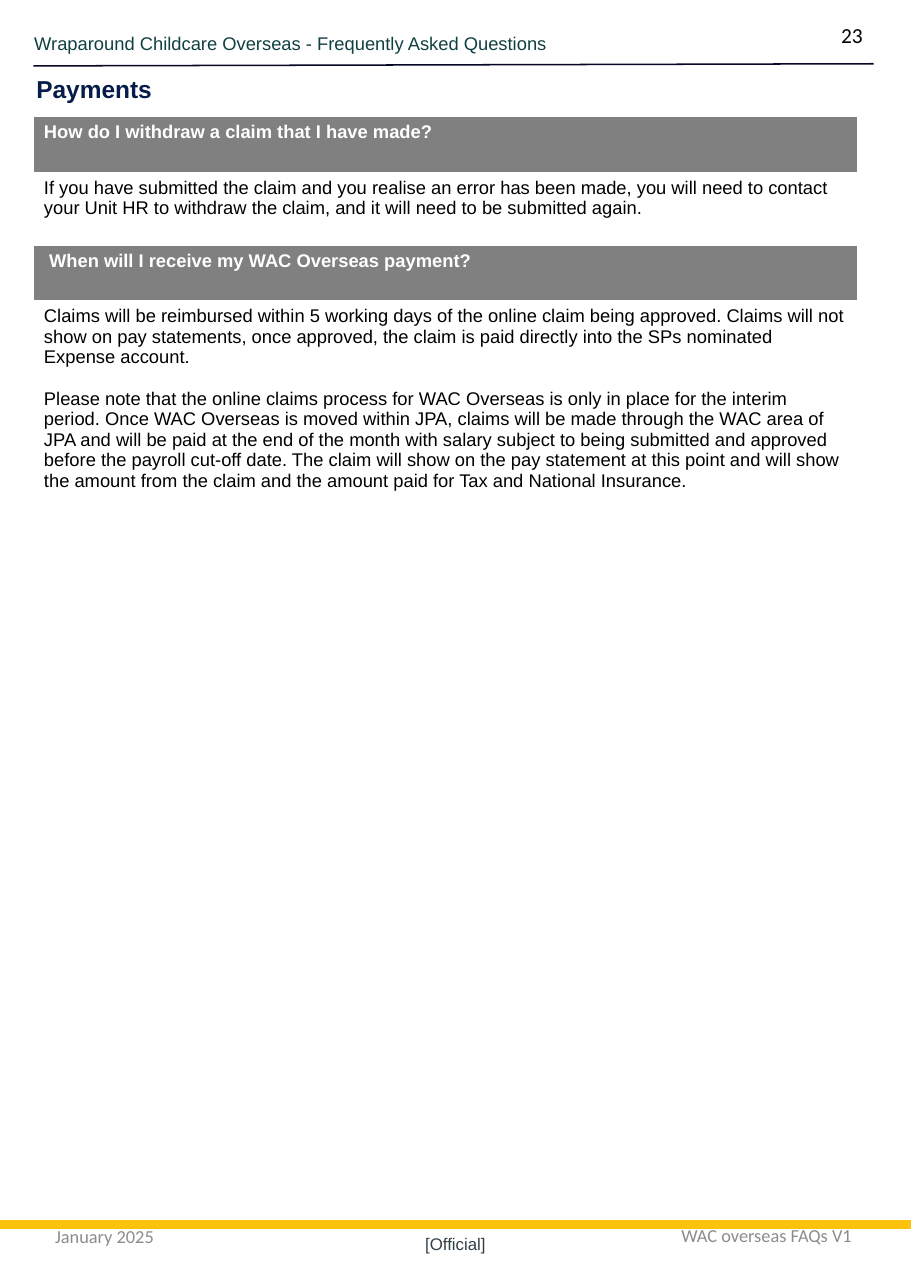
from pptx import Presentation
from pptx.util import Cm, Pt
from pptx.dml.color import RGBColor as Rgb
from pptx.enum.shapes import MSO_CONNECTOR as Link
from pptx.enum.text import PP_ALIGN as Align, MSO_ANCHOR as Anchor
from pptx.oxml import parse_xml
from pptx.oxml.ns import nsdecls

WIDE, HIGH = 21.0, 29.7
BODY = dict(name="Arial", size=Pt(12), bold=False)
HEAD = dict(BODY, bold=True)
FOOT = dict(name="Calibri", size=Pt(12))

# Question, answer paragraphs, height of question row, height of answer row
FAQS = [
    ("How do I withdraw a claim that I have made?",
     ["If you have submitted the claim and you realise an error has been made, "
      "you will need to contact your Unit HR to withdraw the claim, and it will "
      "need to be submitted again."], 1.28, 1.69),
    (" When will I receive my WAC Overseas payment?",
     ["Claims will be reimbursed within 5 working days of the online claim being "
      "approved. Claims will not show on pay statements, once approved, the claim "
      "is paid directly into the SPs nominated Expense account.",
      "Please note that the online claims process for WAC Overseas is only in "
      "place for the interim period. Once WAC Overseas is moved within JPA, claims "
      "will be made through the WAC area of JPA and will be paid at the end of the "
      "month with salary subject to being submitted and approved before the payroll "
      "cut-off date. The claim will show on the pay statement at this point and "
      "will show the amount from the claim and the amount paid for Tax and National "
      "Insurance."], 1.27, 4.83),
]


def tint(code):
    return Rgb.from_string(code)


def write(frame, texts, font, color, align=Align.LEFT):
    for i, text in enumerate(texts):
        para = frame.paragraphs[0] if i == 0 else frame.add_paragraph()
        para.alignment = align
        if i < len(texts) - 1:
            para.space_after = Pt(13.5)
        run = para.add_run()
        run.text = text
        for key, val in font.items():
            setattr(run.font, key, val)
        run.font.color.rgb = tint(color)


def label(slide, box, text, font, color, align=Align.LEFT, anchor=Anchor.TOP, pad=True):
    frame = slide.shapes.add_textbox(*map(Cm, box)).text_frame
    frame.word_wrap = True
    frame.vertical_anchor = anchor
    if not pad:
        for side in ("left", "top", "right", "bottom"):
            setattr(frame, f"margin_{side}", 0)
    write(frame, [text], font, color, align)


def rule(slide, ends, color, width):
    line = slide.shapes.add_connector(Link.STRAIGHT, *map(Cm, ends))
    line.line.color.rgb = tint(color)
    line.line.width = Pt(width)
    line._element.spPr.append(parse_xml(f"<a:effectLst {nsdecls('a')}/>"))


def header(slide, x, y, w):
    label(slide, (x + 0.02, y + 0.36, 14.76, 1.02),
          "Wraparound Childcare Overseas - Frequently Asked Questions",
          BODY, "114042", pad=False)
    label(slide, (x + w - 1.68, y, 1.68, 0.86), "23",
          dict(FOOT, size=Pt(14)), "000000", Align.RIGHT)
    rule(slide, (x, y + 1.14, x + w, y + 1.09), "060625", 1)
    label(slide, (x - 0.18, y + 1.21, 10.06, 0.94), "Payments",
          dict(HEAD, size=Pt(16)), "071D49")


def questions(slide, x, y, w):
    rows = []
    for ask, reply, top, low in FAQS:
        rows.append(([ask], HEAD, "FFFFFF", "808080", top))
        rows.append((reply, BODY, "000000", "FFFFFF", low))
    tall = sum(row[-1] for row in rows)
    table = slide.shapes.add_table(len(rows), 1, Cm(x), Cm(y), Cm(w), Cm(tall)).table
    table.first_row = table.horz_banding = False
    for i, (texts, font, color, fill, high) in enumerate(rows):
        table.rows[i].height = Cm(high)
        cell = table.cell(i, 0)
        cell.fill.solid()
        cell.fill.fore_color.rgb = tint(fill)
        write(cell.text_frame, texts, font, color)


def footer(slide, x, y, w):
    label(slide, (x + 1.02, y - 0.51, 4.9, 1.57), "January 2025",
          FOOT, "8C8C8C", anchor=Anchor.MIDDLE)
    label(slide, (x + w - 6.65, y - 0.53, 6.65, 1.57), "WAC overseas FAQs V1",
          FOOT, "8C8C8C", Align.CENTER, Anchor.MIDDLE)
    rule(slide, (x, y, x + w, y), "FDC20B", 6)
    label(slide, (x, y + 0.21, w, 0.48), "[Official]",
          dict(BODY, size=Pt(11)), "333F47", Align.CENTER, Anchor.BOTTOM, pad=False)


def main():
    deck = Presentation()
    deck.slide_width, deck.slide_height = Cm(WIDE), Cm(HIGH)
    slide = deck.slides.add_slide(deck.slide_layouts[6])
    header(slide, 0.77, 0.38, 19.37)
    questions(slide, 0.76, 2.69, 19)
    footer(slide, 0, 28.23, WIDE)
    deck.save("out.pptx")


if __name__ == "__main__":
    main()
